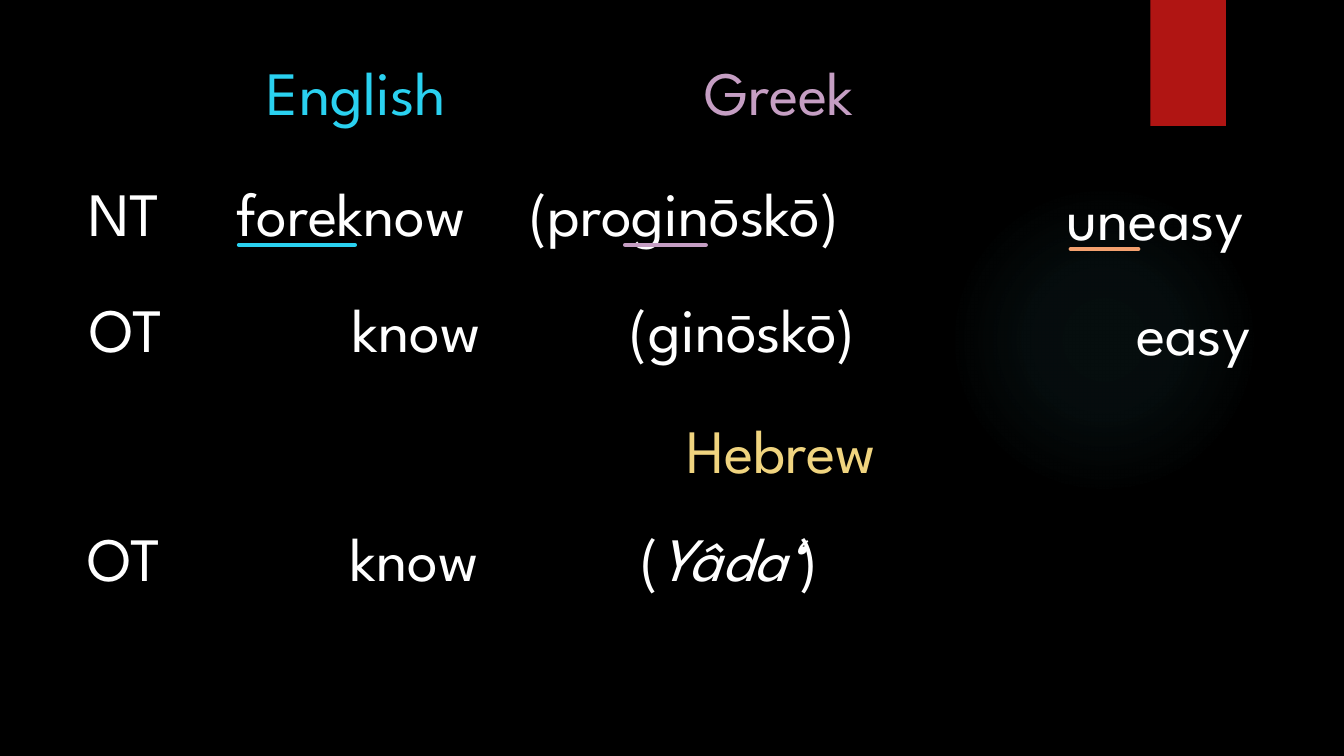
import pptx
import pptx.util
import pptx.dml.color
import pptx.enum.shapes
import pptx.enum.text
import pptx.oxml
import pptx.oxml.ns
from lxml import etree

Inches = pptx.util.Inches
RGB = pptx.dml.color.RGBColor

BLACK = RGB(0x00, 0x00, 0x00)
WHITE = RGB(0xFF, 0xFF, 0xFF)
CYAN = RGB(0x2A, 0xD1, 0xF0)
MAUVE = RGB(0xC5, 0x9E, 0xC3)
GOLD = RGB(0xF0, 0xD4, 0x7F)
ORANGE = RGB(0xF4, 0xA1, 0x6F)
RED = RGB(0xB0, 0x15, 0x13)
GLOW = RGB(0x50, 0xB9, 0xC1)

FONT, SIZE = "League Spartan", 44
WIDTH, HEIGHT = 13.33, 7.5
ROW_WIDTH, ROW_HEIGHT, INSET = 11.16, 1.53, 0.1

# Rows: left, top, width, and words as (distance from text start, text, colour, italic)
ROWS = [
    (0.79, 0.5, ROW_WIDTH, [(1.76, "English", CYAN, False), (6.1, "Greek", MAUVE, False)]),
    (0.78, 1.7, ROW_WIDTH, [(0, "NT", WHITE, False), (1.47, "foreknow", WHITE, False),
                            (4.37, "(proginōskō)", WHITE, False)]),
    (0.79, 2.85, ROW_WIDTH, [(0, "OT", WHITE, False), (2.61, "know", WHITE, False),
                             (5.36, "(ginōskō)", WHITE, False)]),
    (0.75, 4.05, ROW_WIDTH, [(5.96, "Hebrew", GOLD, False)]),
    (0.77, 5.13, ROW_WIDTH, [(0, "OT", WHITE, False), (2.61, "know", WHITE, False),
                             (5.48, "(", WHITE, False), (None, "Yâda‘", WHITE, True),
                             (None, ")", WHITE, False)]),
    (10.48, 1.74, 2.85, [(0, "uneasy", WHITE, False)]),
    (11.17, 2.88, 2.23, [(0, "easy", WHITE, False)]),
]

# Prefix underlines: start, end, height on the slide, colour
UNDERLINES = [(2.37, 3.52, 2.43, CYAN), (6.2, 7, 2.43, MAUVE), (10.62, 11.29, 2.47, ORANGE)]

# Glow stops: position and opacity in percent
GLOW_STOPS = [(0, 7), (36, 6), (69, 0)]

deck = pptx.Presentation()
deck.slide_width, deck.slide_height = Inches(WIDTH), Inches(HEIGHT)
slide = deck.slides.add_slide(deck.slide_layouts[6])
slide.background.fill.solid()
slide.background.fill.fore_color.rgb = BLACK


def add_decoration(kind, left, top, width, height, colour):
    decoration = slide.shapes.add_shape(
        kind, Inches(left), Inches(top), Inches(width), Inches(height))
    decoration.shadow.inherit = False
    decoration.line.fill.background()
    decoration.fill.solid()
    decoration.fill.fore_color.rgb = colour
    return decoration


def add_row(left, top, width, words):
    row = slide.shapes.add_textbox(Inches(left), Inches(top), Inches(width), Inches(ROW_HEIGHT))
    frame = row.text_frame
    frame.word_wrap = True
    # The line of text rests on the middle of its box
    frame.vertical_anchor = pptx.enum.text.MSO_ANCHOR.BOTTOM
    frame.margin_left = frame.margin_right = Inches(INSET)
    frame.margin_bottom = Inches(ROW_HEIGHT / 2)
    line = frame.paragraphs[0]
    stops = [start for start, *_ in words if start]
    if stops:
        tabs = etree.SubElement(line._p.get_or_add_pPr(), pptx.oxml.ns.qn("a:tabLst"))
        for stop in stops:
            etree.SubElement(tabs, pptx.oxml.ns.qn("a:tab"), pos=str(Inches(stop)), algn="l")
    line.font.name, line.font.size = FONT, pptx.util.Pt(SIZE)
    for start, text, colour, italic in words:
        word = line.add_run()
        word.text = ("\t" if start else "") + text
        word.font.color.rgb = colour
        if italic:
            word.font.italic = True


# Background glow and corner ribbon
glow = add_decoration(pptx.enum.shapes.MSO_SHAPE.OVAL, 9.41, 1.83, 3.08, 3.08, GLOW)
stops_xml = "".join(
    f'<a:gs pos="{position * 1000}"><a:srgbClr val="{GLOW}">'
    f'<a:alpha val="{opacity * 1000}"/></a:srgbClr></a:gs>'
    for position, opacity in GLOW_STOPS)
gradient = pptx.oxml.parse_xml(
    f'<a:gradFill {pptx.oxml.ns.nsdecls("a")}><a:gsLst>{stops_xml}</a:gsLst>'
    '<a:path path="circle"><a:fillToRect l="50000" t="50000" r="50000" b="50000"/></a:path>'
    '</a:gradFill>')
glow_properties = glow._element.spPr
glow_properties.replace(glow_properties.find(pptx.oxml.ns.qn("a:solidFill")), gradient)
add_decoration(pptx.enum.shapes.MSO_SHAPE.RECTANGLE, 11.41, 0, 0.75, 1.25, RED)

# Words
for row_content in ROWS:
    add_row(*row_content)

# Underlines with rounded ends
for start, end, level, colour in UNDERLINES:
    underline = slide.shapes.add_connector(
        pptx.enum.shapes.MSO_CONNECTOR.STRAIGHT,
        Inches(start), Inches(level), Inches(end), Inches(level))
    underline.line.color.rgb = colour
    underline.line.width = pptx.util.Pt(3)
    underline.line._get_or_add_ln().set("cap", "rnd")
    etree.SubElement(underline._element.spPr, pptx.oxml.ns.qn("a:effectLst"))

deck.save("out.pptx")
